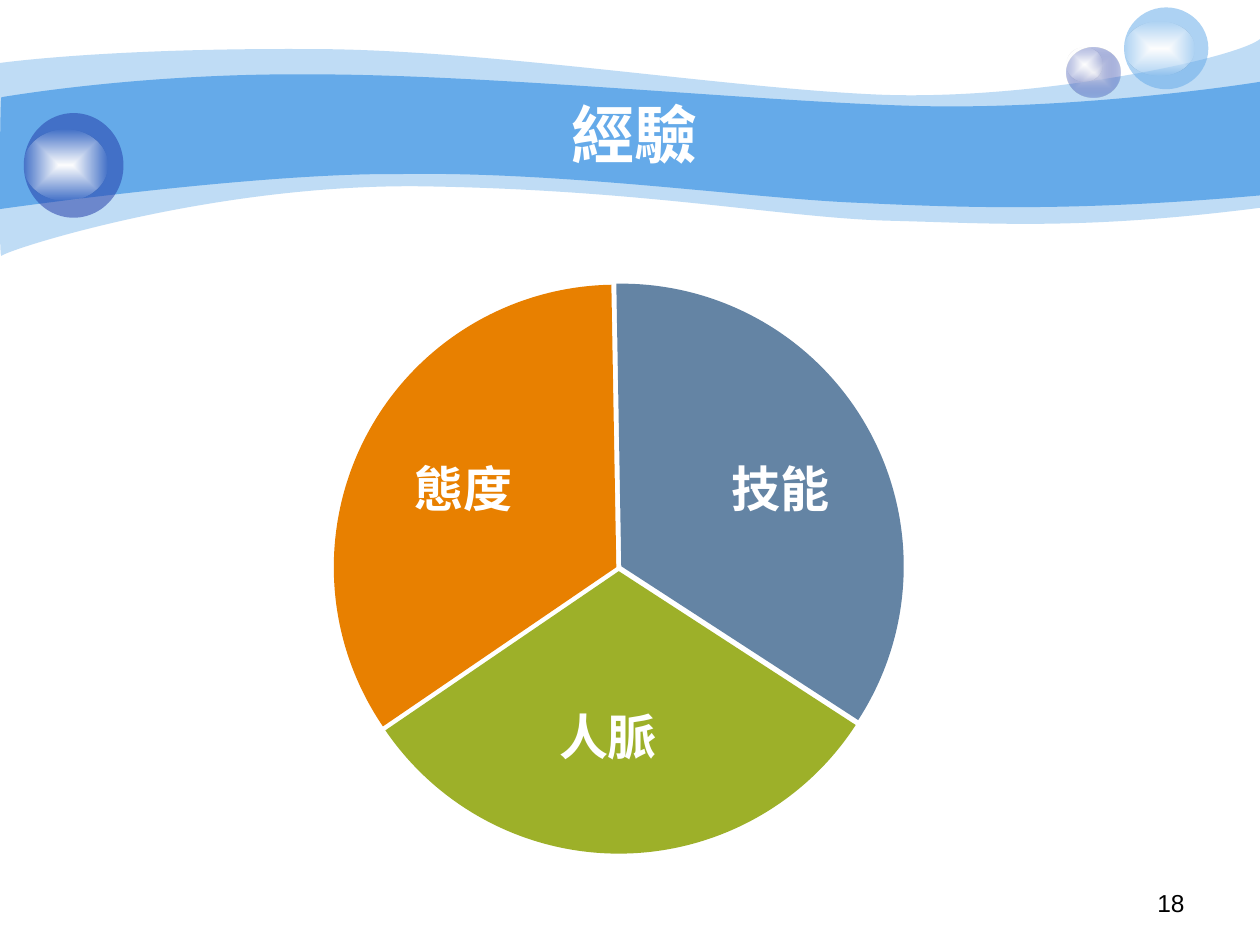
from lxml import etree
from pptx import Presentation
from pptx.dml.color import RGBColor
from pptx.enum.shapes import MSO_SHAPE
from pptx.enum.text import MSO_ANCHOR, PP_ALIGN
from pptx.oxml import parse_xml
from pptx.oxml.ns import nsdecls, qn
from pptx.util import Cm, Pt

SKY = RGBColor(0x65, 0xAA, 0xE9)
NAVY = RGBColor(0x23, 0x3D, 0xA9)
MIST = RGBColor(0xE1, 0xE2, 0xED)
ORANGE = RGBColor(0xE8, 0x80, 0x00)
SLATE = RGBColor(0x64, 0x84, 0xA4)
GREEN = RGBColor(0x9D, 0xB0, 0x29)
WHITE = RGBColor(0xFF, 0xFF, 0xFF)
BLACK = RGBColor(0, 0, 0)
CJK = "Noto Sans CJK SC"

# All positions are in centimetres.
# Wave: opacity, start, then segments of three points (curve) or one (line)
WAVES = [
    (41, (0, 1.27), [
        [(0.61, 1.19), (2.72, 0.97), (6.27, 0.99)],
        [(9.8, 0.99), (14.61, 1.78), (17.75, 1.91)],
        [(20.88, 2.03), (24.89, 1.19), (25.4, 0.79)],
        [(25.4, 4.19)],
        [(21.79, 4.65), (19.99, 4.5), (17.91, 4.45)],
        [(15.8, 4.39), (13.08, 3.84), (8.71, 3.76)],
        [(4.37, 3.66), (0.1, 5.05), (0.03, 5.16)],
        [(-0.03, 5.28), (0, 1.9), (0, 1.27)],
    ]),
    (100, (0.03, 1.96), [
        [(0.05, 1.96), (2.79, 1.47), (6.3, 1.5)],
        [(9.8, 1.5), (15.11, 2.03), (18.24, 2.13)],
        [(21.36, 2.24), (24.79, 1.75), (25.4, 1.65)],
        [(25.4, 3.94)],
        [(21.67, 4.27), (19.43, 4.19), (17.32, 4.09)],
        [(15.21, 4.01), (11.35, 3.45), (8.05, 3.51)],
        [(5.16, 3.48), (-0.05, 4.22), (-0.03, 4.22)],
        [(0, 4.22), (0, 1.96), (0.03, 1.96)],
    ]),
]
GLOW = [(WHITE, 100), (WHITE, 0)]
# Bubble: body box, body stops (colour, opacity), highlight box
BUBBLES = [
    ((21.51, 0.95, 1.07, 1.02), [(MIST, 100), (NAVY, 31)], (21.51, 0.95, 0.71, 0.69)),
    ((22.66, 0.15, 1.7, 1.65), [(SKY, 53)], (22.66, 0.43, 1.42, 1.09)),
    ((0.48, 2.28, 2.01, 2.11), [(NAVY, 53)], (0.48, 2.62, 1.68, 1.42)),
]
PIE_SIZE = 11.39
LABEL_SIZE = (3, 1.45)
# Slice: label, colour, start and end angle, circle corner, label corner
SLICES = [
    ("態度", ORANGE, 145.7, 269, (6.73, 5.74), (8.1, 9.12)),
    ("技能", SLATE, 269, 33, (6.83, 5.72), (14.5, 9.12)),
    ("人脈", GREEN, 33, 145.7, (6.78, 5.82), (11.02, 14.12)),
]


def paint(s, stops):
    """Fill with one colour, or with a gradient running out from the centre."""
    s.shadow.inherit = False
    s.line.fill.background()
    if len(stops) == 1:
        colour, opacity = stops[0]
        s.fill.solid()
        s.fill.fore_color.rgb = colour
        if opacity < 100:
            node = next(s._element.spPr.iter(qn("a:srgbClr")))
            etree.SubElement(node, qn("a:alpha")).set("val", str(opacity * 1000))
        return
    s.fill.background()
    gs = "".join(
        f'<a:gs pos="{pos}"><a:srgbClr val="{colour}">'
        f'<a:alpha val="{opacity * 1000}"/></a:srgbClr></a:gs>'
        for pos, (colour, opacity) in zip((0, 100000), stops))
    grad = parse_xml(
        f'<a:gradFill {nsdecls("a")} rotWithShape="1"><a:gsLst>{gs}</a:gsLst>'
        '<a:path path="shape"><a:fillToRect l="50000" t="50000" r="50000" b="50000"/>'
        '</a:path></a:gradFill>')
    sp_pr = s._element.spPr
    sp_pr.replace(sp_pr.find(qn("a:noFill")), grad)


def add_preset(kind, box, stops):
    s = slide.shapes.add_shape(kind, *map(Cm, box))
    paint(s, stops)
    return s


def add_wave(opacity, start, segments):
    """Join the segment ends, then turn each three-point segment into a curve."""
    builder = slide.shapes.build_freeform(*map(Cm, start))
    builder.add_line_segments([tuple(map(Cm, seg[-1])) for seg in segments], close=True)
    s = builder.convert_to_shape()
    lines = list(s._element.spPr.iter(qn("a:lnTo")))
    for line, seg in zip(lines, segments):
        if len(seg) == 3:
            curve = etree.Element(qn("a:cubicBezTo"))
            for x, y in seg:
                etree.SubElement(curve, qn("a:pt"), x=str(Cm(x) - s.left),
                                 y=str(Cm(y) - s.top))
            line.getparent().replace(line, curve)
    paint(s, [(SKY, opacity)])


def add_text(text, box, size, font=CJK, colour=WHITE, bold=True,
             align=PP_ALIGN.LEFT, anchor=MSO_ANCHOR.TOP):
    tf = slide.shapes.add_textbox(*map(Cm, box)).text_frame
    tf.word_wrap = True
    tf.vertical_anchor = anchor
    p = tf.paragraphs[0]
    p.alignment = align
    r = p.add_run()
    r.text = text
    r.font.size = Pt(size)
    r.font.name = font
    r.font.bold = bold
    r.font.color.rgb = colour
    etree.SubElement(r.font._element, qn("a:ea")).set("typeface", font)


prs = Presentation()
prs.slide_width, prs.slide_height = Cm(25.4), Cm(19.05)
slide = prs.slides.add_slide(prs.slide_layouts[6])

for wave in WAVES:
    add_wave(*wave)
for body, stops, highlight in BUBBLES:
    add_preset(MSO_SHAPE.OVAL, body, stops)
    add_preset(MSO_SHAPE.OVAL, highlight, GLOW)

add_text("經驗", (2.54, 1.9, 20.52, 1.57), 36,
         align=PP_ALIGN.CENTER, anchor=MSO_ANCHOR.MIDDLE)
add_text("18", (18.21, 17.78, 5.92, 0.89), 14, font="Arial", colour=BLACK,
         bold=False, align=PP_ALIGN.RIGHT)

for _, colour, start, end, corner, _ in SLICES:
    s = add_preset(MSO_SHAPE.PIE, (*corner, PIE_SIZE, PIE_SIZE), [(colour, 100)])
    # Angles are stored in 1/60000 degree, adjustments in 1/100000
    s.adjustments[0], s.adjustments[1] = start * 0.6, end * 0.6
for label, *_, corner in SLICES:
    add_text(label, (*corner, *LABEL_SIZE), 28)

prs.save("out.pptx")
